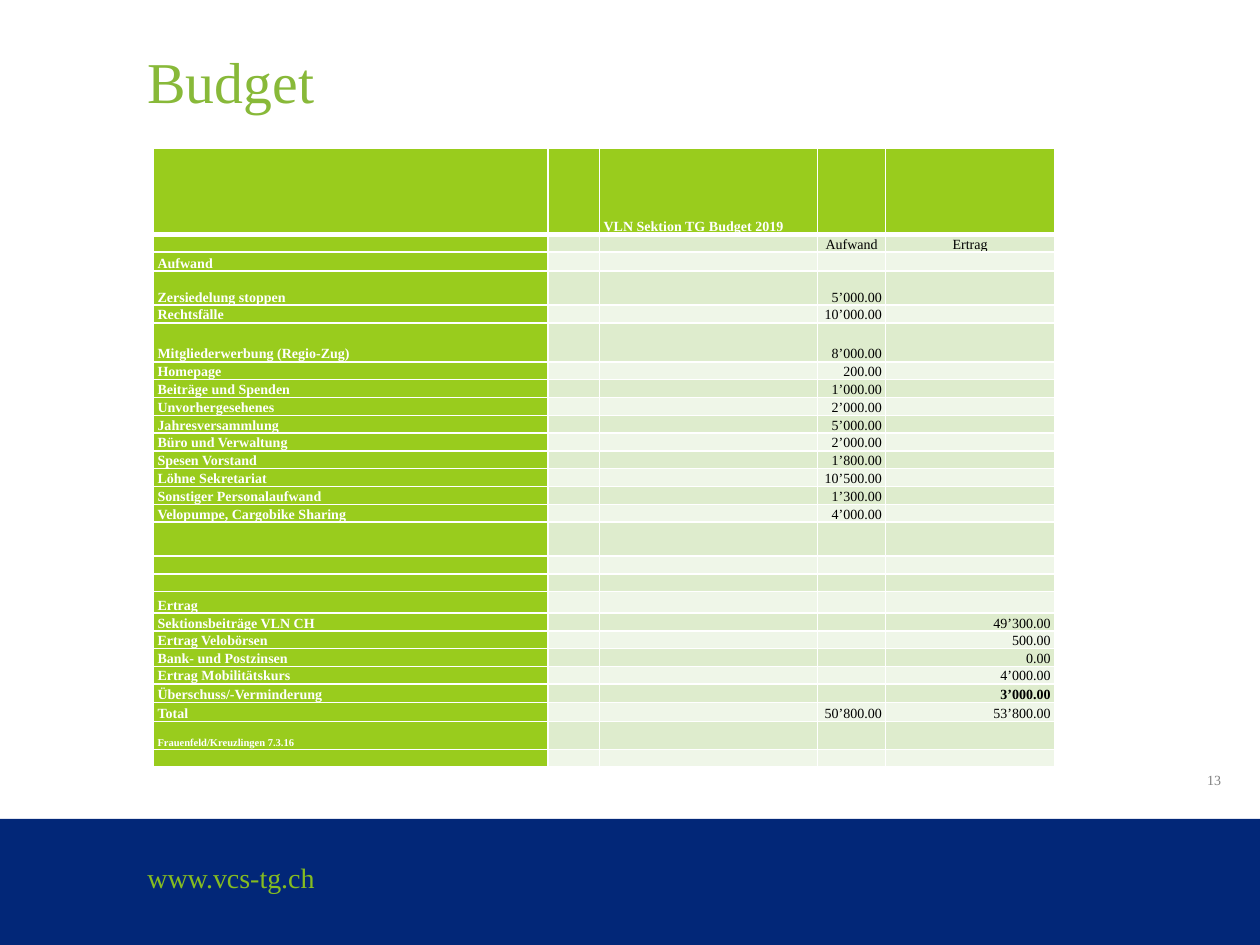
from dataclasses import dataclass

from lxml import etree
from pptx import Presentation
from pptx.dml.color import RGBColor
from pptx.enum.shapes import MSO_SHAPE
from pptx.enum.text import MSO_ANCHOR, MSO_AUTO_SIZE, PP_ALIGN
from pptx.oxml.ns import qn
from pptx.util import Inches, Pt

RECTANGLE = MSO_SHAPE.RECTANGLE
TOP, BOTTOM = MSO_ANCHOR.TOP, MSO_ANCHOR.BOTTOM
LEFT, CENTER, RIGHT = PP_ALIGN.LEFT, PP_ALIGN.CENTER, PP_ALIGN.RIGHT
NO_AUTOFIT = MSO_AUTO_SIZE.NONE
TITLE_ONLY = 5


@dataclass(frozen=True)
class Theme:
    font: str = "Times New Roman"
    title: str = "88B939"
    link: str = "85BC20"
    footer: str = "022778"
    number: str = "808080"
    accent: str = "99CC1D"
    bands: tuple = ("DEECCD", "EFF6E8")
    light: str = "FFFFFF"
    dark: str = "000000"
    title_size: float = 33
    link_size: float = 16
    table_size: float = 8
    note_size: float = 6


COLUMN_WIDTHS = (3.13, 0.41, 1.73, 0.54, 1.34)
LINE = 1.7 / 12  # height of an ordinary table row
HEADING = "VLN Sektion TG Budget 2019"
NOTE = "Frauenfeld/Kreuzlingen 7.3.16"
SURPLUS = "Überschuss/-Verminderung"

# label, expense, income, row height
BUDGET = [
    ("", "Aufwand", "Ertrag", LINE),
    ("Aufwand", "", "", 0.15),
    ("Zersiedelung stoppen", "5’000.00", "", 0.27),
    ("Rechtsfälle", "10’000.00", "", LINE),
    ("Mitgliederwerbung (Regio-Zug)", "8’000.00", "", 0.31),
    ("Homepage", "200.00", "", LINE),
    ("Beiträge und Spenden", "1’000.00", "", LINE),
    ("Unvorhergesehenes", "2’000.00", "", LINE),
    ("Jahresversammlung", "5’000.00", "", LINE),
    ("Büro und Verwaltung", "2’000.00", "", LINE),
    ("Spesen Vorstand", "1’800.00", "", LINE),
    ("Löhne Sekretariat", "10’500.00", "", LINE),
    ("Sonstiger Personalaufwand", "1’300.00", "", LINE),
    ("Velopumpe, Cargobike Sharing", "4’000.00", "", LINE),
    ("", "", "", 0.27),
    ("", "", "", LINE),
    ("", "", "", LINE),
    ("Ertrag", "", "", 0.17),
    ("Sektionsbeiträge VLN CH", "", "49’300.00", LINE),
    ("Ertrag Velobörsen", "", "500.00", LINE),
    ("Bank- und Postzinsen", "", "0.00", LINE),
    ("Ertrag Mobilitätskurs", "", "4’000.00", 0.09),
    (SURPLUS, "", "3’000.00", 0.15),
    ("Total", "50’800.00", "53’800.00", 0.15),
    (NOTE, "", "", 0.22),
    ("", "", "", LINE),
]


class SlideBuilder:
    def __init__(self, page, theme):
        self.page = page
        self.theme = theme

    def format_text(self, para, size, color, bold=False):
        for span in para.runs:
            span.font.name = self.theme.font
            span.font.size = Pt(size)
            span.font.bold = bold
            span.font.color.rgb = RGBColor.from_string(color)

    def clear_margins(self, frame):
        frame.margin_left = frame.margin_right = 0
        frame.margin_top = frame.margin_bottom = 0
        frame.vertical_anchor = TOP
        frame.auto_size = NO_AUTOFIT

    def title(self, text, left, top, width, height):
        box = self.page.shapes.title
        box.left, box.top = Inches(left), Inches(top)
        box.width, box.height = Inches(width), Inches(height)
        frame = box.text_frame
        frame.text = text
        self.clear_margins(frame)
        para = frame.paragraphs[0]
        para.alignment = LEFT
        para.line_spacing = Pt(42.2)
        self.format_text(para, self.theme.title_size, self.theme.title)

    def text(self, text, left, top, width, height, size, color):
        box = self.page.shapes.add_textbox(
            Inches(left), Inches(top), Inches(width), Inches(height))
        frame = box.text_frame
        frame.text = text
        self.clear_margins(frame)
        frame.word_wrap = False
        self.format_text(frame.paragraphs[0], size, color)

    def bar(self, left, top, width, height, color):
        bar = self.page.shapes.add_shape(
            RECTANGLE, Inches(left), Inches(top), Inches(width), Inches(height))
        bar.shadow.inherit = False
        bar.fill.solid()
        bar.fill.fore_color.rgb = RGBColor.from_string(color)
        bar.line.fill.background()

    def borders(self, cell, top=1, bottom=1):
        """Put white lines around a cell, ahead of its fill as the schema asks."""
        properties = cell._tc.get_or_add_tcPr()
        sides = (("a:lnL", 1), ("a:lnR", 1), ("a:lnT", top), ("a:lnB", bottom))
        for index, (tag, points) in enumerate(sides):
            line = etree.Element(qn(tag), w=str(Pt(points)))
            fill = etree.SubElement(line, qn("a:solidFill"))
            etree.SubElement(fill, qn("a:srgbClr"), val=self.theme.light)
            properties.insert(index, line)

    def cell(self, cell, text, fill, color, size, bold, alignment):
        cell.margin_left = cell.margin_right = Inches(0.03)
        cell.margin_top = cell.margin_bottom = 0
        cell.vertical_anchor = BOTTOM
        cell.fill.solid()
        cell.fill.fore_color.rgb = RGBColor.from_string(fill)
        para = cell.text_frame.paragraphs[0]
        para.alignment = alignment
        if text:
            para.text = text
            self.format_text(para, size, color, bold)
        else:  # keeps an empty cell from stretching its row
            etree.SubElement(para._p, qn("a:endParaRPr"), sz=str(size * 100))

    def budget_table(self, left, top):
        theme = self.theme
        rows = [("", "", HEADING, "", "")]
        rows += [(label, "", "", expense, income) for label, expense, income, _ in BUDGET]
        heights = [0.68] + [entry[-1] for entry in BUDGET]
        table = self.page.shapes.add_table(
            len(rows), len(COLUMN_WIDTHS), Inches(left), Inches(top),
            Inches(sum(COLUMN_WIDTHS)), Inches(sum(heights))).table
        table.horz_banding = False
        table.first_row = False
        for column, width in zip(table.columns, COLUMN_WIDTHS):
            column.width = Inches(width)
        for r, (values, height) in enumerate(zip(rows, heights)):
            table.rows[r].height = Inches(height)
            for c, value in enumerate(values):
                accented = r == 0 or c == 0
                fill = theme.accent if accented else theme.bands[(r - 1) % 2]
                color = theme.light if accented else theme.dark
                size = theme.note_size if value == NOTE else theme.table_size
                bold = accented or (values[0] == SURPLUS and c == 4)
                alignment = LEFT if accented else CENTER if r == 1 else RIGHT
                cell = table.cell(r, c)
                self.cell(cell, value, fill, color, size, bold, alignment)
                self.borders(cell, top=3 if r == 1 else 1, bottom=3 if r == 0 else 1)


def main():
    deck = Presentation()
    deck.slide_width, deck.slide_height = Inches(10), Inches(7.5)
    theme = Theme()
    page = deck.slides.add_slide(deck.slide_layouts[TITLE_ONLY])
    builder = SlideBuilder(page, theme)
    builder.bar(0, 6.5, 10, 1, theme.footer)
    builder.text("www.vcs-tg.ch", 1.17, 6.83, 3.58, 0.33, theme.link_size, theme.link)
    builder.text("13", 9.58, 6.12, 0.33, 0.13, theme.table_size, theme.number)
    builder.title("Budget", 1.17, 0.33, 8.33, 0.58)
    builder.budget_table(1.22, 1.18)
    deck.save("out.pptx")


if __name__ == "__main__":
    main()
